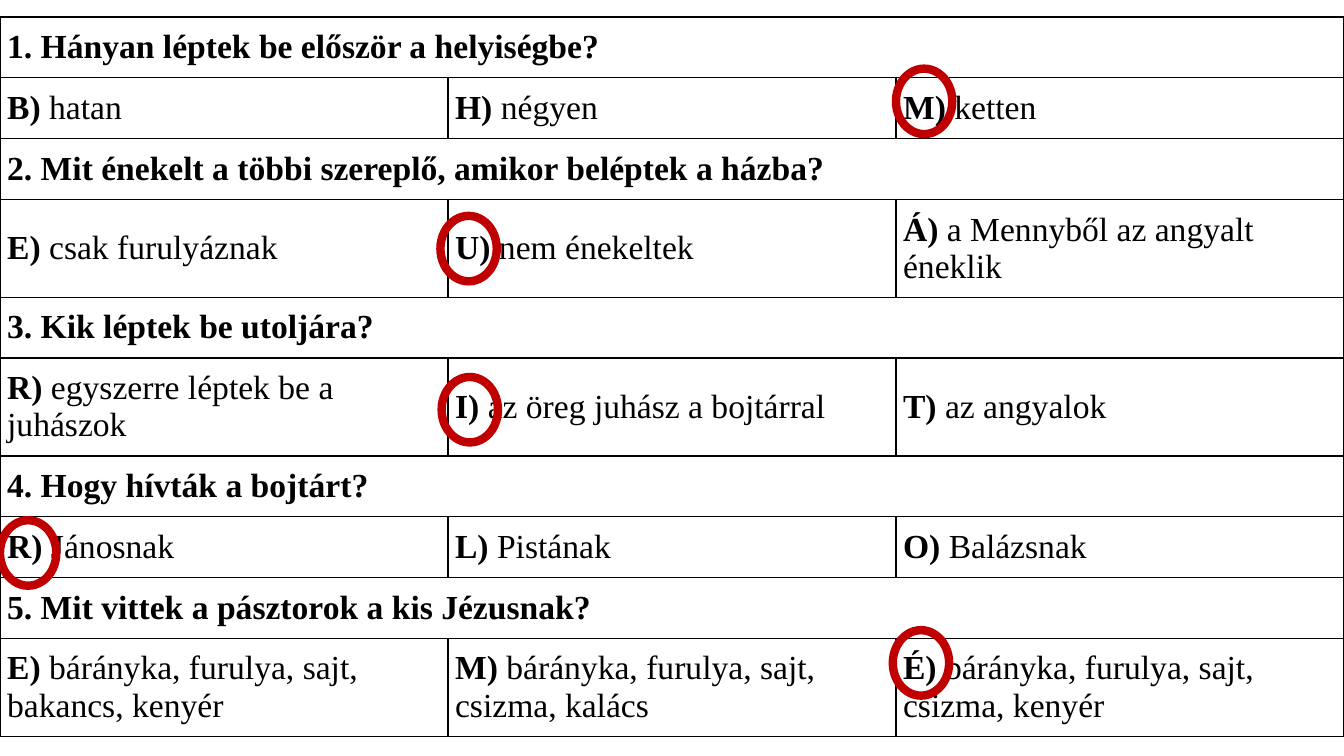
from dataclasses import dataclass

from lxml.etree import SubElement
from pptx import Presentation
from pptx.dml.color import RGBColor
from pptx.enum.shapes import MSO_SHAPE
from pptx.enum.text import MSO_ANCHOR
from pptx.oxml.ns import qn
from pptx.slide import Slide
from pptx.table import Table, _Cell
from pptx.util import Cm, Pt

COLORS = {"text": "000000", "border": "000000", "cell": "FFFFFF", "ring": "C00000"}
FONT = "Times New Roman"
SLIDE_WIDTH, SLIDE_HEIGHT = 33.87, 19.05
TABLE_TOP = 0.43
COLUMNS = 3
SINGLE_ROW, DOUBLE_ROW = 1.53, 2.47
RING_WIDTH, RING_HEIGHT = 1.42, 1.65


@dataclass
class Question:
    text: str
    answers: list[tuple[str, str]]
    answer_height: float
    ring_left: float
    ring_top: float


QUESTIONS = [
    Question("1. Hányan léptek be először a helyiségbe?",
             [("B) ", "hatan"), ("H) ", "négyen"), ("M) ", "ketten")],
             SINGLE_ROW, 22.58, 1.73),
    Question("2. Mit énekelt a többi szereplő, amikor beléptek a házba?",
             [("E) ", "csak furulyáznak"), ("U) ", "nem énekeltek"),
              ("Á) ", "a Mennyből az angyalt éneklik")],
             DOUBLE_ROW, 11.1, 5.44),
    Question("3. Kik léptek be utoljára?",
             [("R) ", "egyszerre léptek be a juhászok"),
              ("I) ", "az öreg juhász a bojtárral"), ("T) ", "az angyalok")],
             DOUBLE_ROW, 11.13, 9.5),
    Question("4. Hogy hívták a bojtárt?",
             [("R) ", "Jánosnak"), ("L) ", "Pistának"), ("O) ", "Balázsnak")],
             SINGLE_ROW, 0, 13.11),
    Question("5. Mit vittek a pásztorok a kis Jézusnak?",
             [("E) ", "bárányka, furulya, sajt, bakancs, kenyér"),
              ("M) ", "bárányka, furulya, sajt, csizma, kalács"),
              ("É) ", "bárányka, furulya, sajt, csizma, kenyér")],
             DOUBLE_ROW, 22.5, 15.88),
]


def color(name: str) -> RGBColor:
    return RGBColor.from_string(COLORS[name])


def format_cell(cell: _Cell) -> None:
    cell.vertical_anchor = MSO_ANCHOR.MIDDLE
    cell.margin_left = cell.margin_right = Cm(0.18)
    cell.margin_top = cell.margin_bottom = 0
    properties = cell._tc.get_or_add_tcPr()
    for side in ("a:lnL", "a:lnR", "a:lnT", "a:lnB"):
        line = SubElement(properties, qn(side), w=str(Pt(1)))
        fill = SubElement(line, qn("a:solidFill"))
        SubElement(fill, qn("a:srgbClr"), val=COLORS["border"])
    cell.fill.solid()
    cell.fill.fore_color.rgb = color("cell")


def add_run(cell: _Cell, text: str, bold: bool) -> None:
    run = cell.text_frame.paragraphs[0].add_run()
    run.text = text
    run.font.name = FONT
    run.font.size = Pt(24)
    run.font.bold = bold
    run.font.color.rgb = color("text")


def fill_question(table: Table, row: int, question: Question) -> None:
    table.rows[row].height = Cm(SINGLE_ROW)
    table.rows[row + 1].height = Cm(question.answer_height)
    for column, (letter, answer) in enumerate(question.answers):
        format_cell(table.cell(row, column))
        answer_cell = table.cell(row + 1, column)
        format_cell(answer_cell)
        add_run(answer_cell, letter, True)
        add_run(answer_cell, answer, False)
    question_cell = table.cell(row, 0)
    question_cell.merge(table.cell(row, COLUMNS - 1))
    add_run(question_cell, question.text, True)


def add_quiz_table(slide: Slide) -> None:
    height = sum(SINGLE_ROW + question.answer_height for question in QUESTIONS)
    table = slide.shapes.add_table(2 * len(QUESTIONS), COLUMNS, 0, Cm(TABLE_TOP),
                                   Cm(SLIDE_WIDTH), Cm(height)).table
    table.first_row = False
    table.horz_banding = False
    for column in table.columns:
        column.width = Cm(SLIDE_WIDTH / COLUMNS)
    for index, question in enumerate(QUESTIONS):
        fill_question(table, 2 * index, question)


def add_answer_ring(slide: Slide, question: Question) -> None:
    ring = slide.shapes.add_shape(MSO_SHAPE.OVAL, Cm(question.ring_left),
                                  Cm(question.ring_top), Cm(RING_WIDTH), Cm(RING_HEIGHT))
    ring.shadow.inherit = False
    ring.fill.background()
    ring.line.color.rgb = color("ring")
    ring.line.width = Pt(6)


def main() -> None:
    presentation = Presentation()
    presentation.slide_width = Cm(SLIDE_WIDTH)
    presentation.slide_height = Cm(SLIDE_HEIGHT)
    slide = presentation.slides.add_slide(presentation.slide_layouts[6])

    # Questions and answers
    add_quiz_table(slide)

    # Rings around the correct letters
    for question in QUESTIONS:
        add_answer_ring(slide, question)

    presentation.save("out.pptx")


if __name__ == "__main__":
    main()
